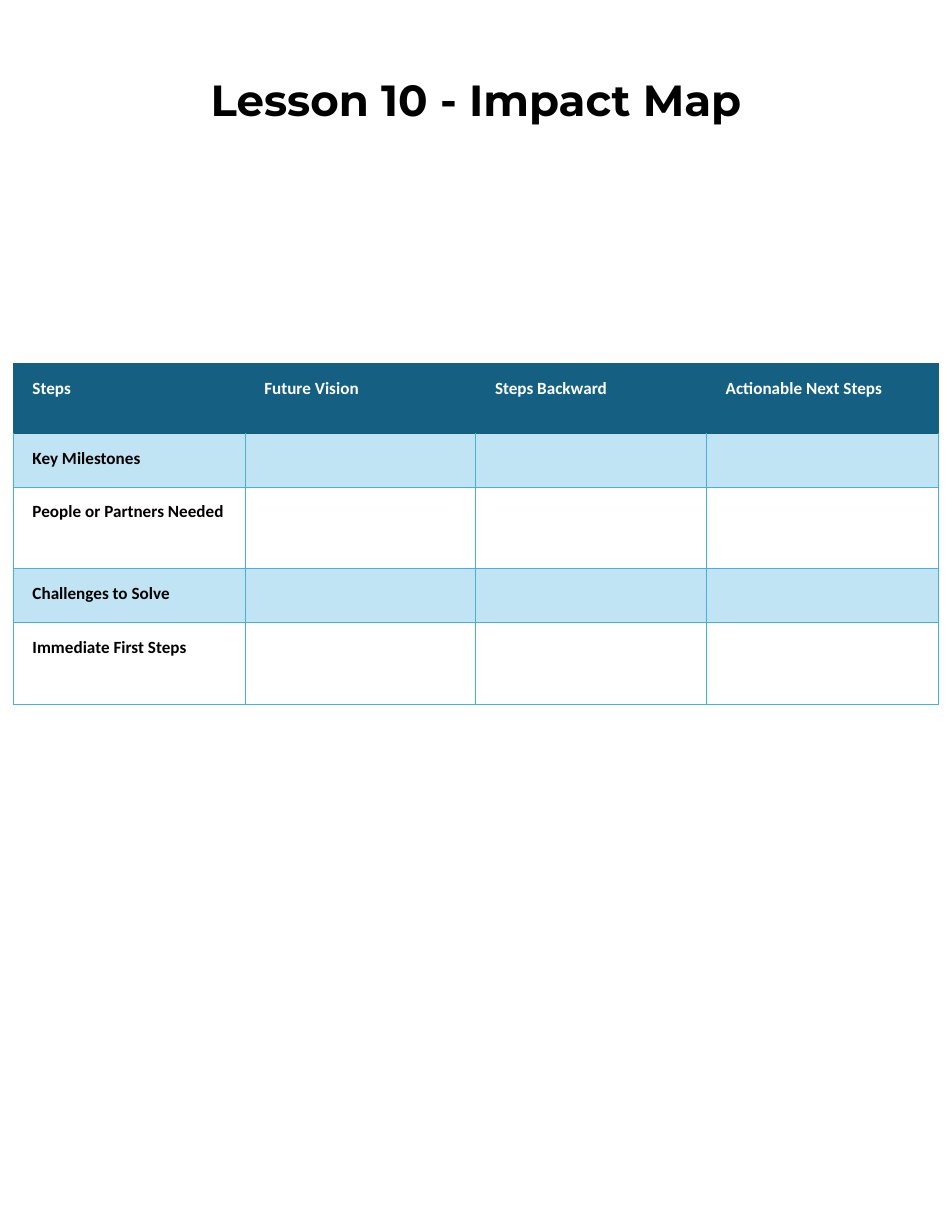
from lxml import etree
from pptx import Presentation
from pptx.dml.color import RGBColor
from pptx.enum.text import MSO_ANCHOR, PP_ALIGN
from pptx.oxml.ns import qn
from pptx.util import Inches, Pt

TOP = MSO_ANCHOR.TOP
LEFT, MID = PP_ALIGN.LEFT, PP_ALIGN.CENTER
WIDE, HIGH = Inches(8.5), Inches(11)
INK = {"dark": "156082", "pale": "C1E4F5", "line": "45B0E1", "white": "FFFFFF", "black": "000000"}
PAD = {f"margin_{side}": Inches(0.1) for side in ("left", "right", "top", "bottom")}
HEAD = {"name": "Montserrat", "size": Pt(28), "bold": True}
BODY = {"name": "Calibri", "size": Pt(11), "bold": True}
TEXTS = [
    ["Steps", "Future Vision", "Steps Backward", "Actionable Next Steps"],
    ["Key Milestones"],
    ["People or Partners Needed"],
    ["Challenges to Solve"],
    ["Immediate First Steps"],
]
COLS = [2.07, 2.06, 2.06, 2.07]
ROWS = [0.62, 0.48, 0.73, 0.48, 0.73]


def apply(item, values):
    """Set each attribute of item from a dict."""
    for key, value in values.items():
        setattr(item, key, value)


def write(para, text, font, ink, align):
    """Put one styled run in a paragraph."""
    para.alignment = align
    run = para.add_run()
    run.text = text
    apply(run.font, font)
    run.font.color.rgb = RGBColor.from_string(INK[ink])


def add_title(slide, text):
    """Add the centred title."""
    box = slide.shapes.add_textbox(
        int(WIDE * 0.034), int(HIGH * 0.05), int(WIDE * 0.932), int(HIGH * 0.067))
    frame = box.text_frame
    apply(frame, {"word_wrap": True, "vertical_anchor": TOP, **PAD})
    write(frame.paragraphs[0], text, HEAD, "black", MID)


def add_edge(cell, side, ink):
    """Draw one border of a cell."""
    line = etree.SubElement(cell._tc.get_or_add_tcPr(), qn(f"a:ln{side}"), w=str(Pt(0.75)))
    fill = etree.SubElement(line, qn("a:solidFill"))
    etree.SubElement(fill, qn("a:srgbClr"), val=INK[ink])


def style_cell(cell, row):
    """Give a cell the borders and fill of its row."""
    for side in "LRTB":
        dark = row == 0 or (row == 1 and side == "T")
        add_edge(cell, side, "dark" if dark else "line")
    if row and row % 2 == 0:
        cell.fill.background()
    else:
        cell.fill.solid()
        cell.fill.fore_color.rgb = RGBColor.from_string(INK["pale" if row else "dark"])


def fill_cell(cell, text, ink):
    """Write a padded, indented label in a cell."""
    apply(cell, {"vertical_anchor": TOP, **PAD})
    para = cell.text_frame.paragraphs[0]
    para.line_spacing = 1.15
    para._p.get_or_add_pPr().set("marL", str(Inches(0.07)))
    write(para, text, BODY, ink, LEFT)


def add_grid(slide):
    """Add the impact table."""
    frame = slide.shapes.add_table(
        len(ROWS), len(COLS), Inches(0.12), Inches(3.25), Inches(sum(COLS)), Inches(sum(ROWS)))
    table = frame.table
    apply(table, {"first_row": False, "horz_banding": False})
    for col, width in zip(table.columns, COLS):
        col.width = Inches(width)
    for row, (high, texts) in enumerate(zip(ROWS, TEXTS)):
        table.rows[row].height = Inches(high)
        for col in range(len(COLS)):
            style_cell(table.cell(row, col), row)
        for col, text in enumerate(texts):
            fill_cell(table.cell(row, col), text, "black" if row else "white")


def main():
    """Build and save the slide."""
    deck = Presentation()
    apply(deck, {"slide_width": WIDE, "slide_height": HIGH})
    slide = deck.slides.add_slide(deck.slide_layouts[6])
    add_title(slide, "Lesson 10 - Impact Map")
    add_grid(slide)
    deck.save("out.pptx")


if __name__ == "__main__":
    main()
